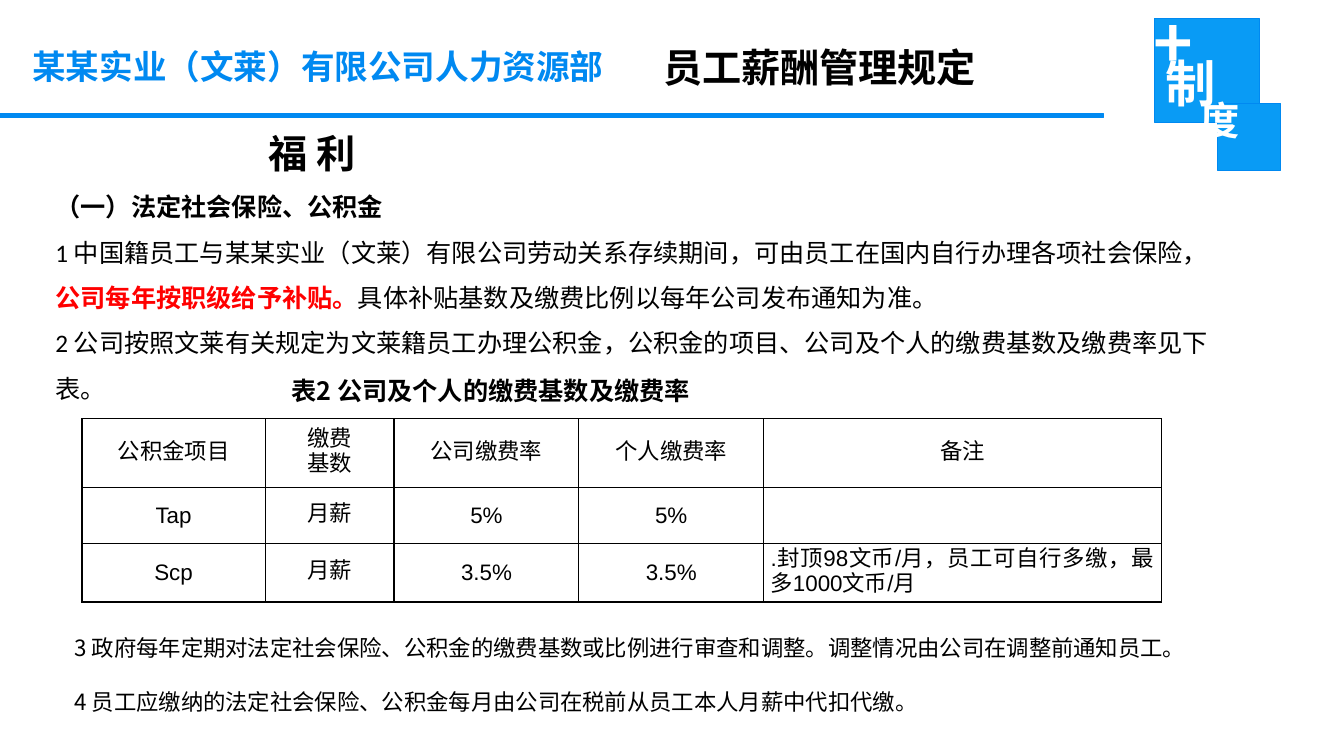
from dataclasses import dataclass

from lxml import etree
from pptx import Presentation
from pptx.dml.color import RGBColor
from pptx.enum import shapes, text
from pptx.oxml import ns
from pptx.util import Pt


@dataclass(frozen=True)
class Theme:
    blue: str = "0089F1"
    tile: str = "099BF5"
    white: str = "FFFFFF"
    black: str = "000000"
    red: str = "FF0000"
    sans: str = "Noto Sans CJK SC"
    mark: str = "Noto Sans CJK JP"
    number: str = "Calibri"
    table: str = "Arial"
    title: int = 28
    department: int = 24
    body: int = 18
    small: int = 16


THEME = Theme()
ALIGN = text.PP_ALIGN
COMPANY = "某某实业（文莱）有限公司"
COLUMN_WIDTHS = [131, 92, 132, 132, 284]
ROW_HEIGHTS = [49, 40, 42]
FUND_ROWS = [
    ["公积金项目", "缴费\n基数", "公司缴费率", "个人缴费率", "备注"],
    ["Tap", "月薪", "5%", "5%", ""],
    ["Scp", "月薪", "3.5%", "3.5%", ".封顶98文币/月，员工可自行多缴，最多1000文币/月"],
]


def add_run(paragraph, content, size=THEME.body, font=THEME.sans,
            color=THEME.black, bold=False):
    run = paragraph.add_run()
    run.text = content
    run.font.size = Pt(size)
    run.font.name = font
    run.font.bold = bold
    run.font.color.rgb = RGBColor.from_string(color)
    east_asian = THEME.mark if font == THEME.mark else THEME.sans
    etree.SubElement(run.font._element, ns.qn("a:ea"), typeface=east_asian)


def write(paragraph, content, spacing=None, align=None, indent=0, **format):
    """Write a string, or a list of (string, format changes) pairs."""
    paragraph.line_spacing = spacing
    paragraph.alignment = align
    if indent:
        paragraph._p.get_or_add_pPr().set("marL", str(Pt(indent)))
    parts = [(content, {})] if isinstance(content, str) else content
    for part, changes in parts:
        add_run(paragraph, part, **{**format, **changes})


def add_text(slide, left, top, width, height, lines, **format):
    """Add a text box; each line is a (content, format changes) pair."""
    box = slide.shapes.add_textbox(Pt(left), Pt(top), Pt(width), Pt(height))
    frame = box.text_frame
    frame.word_wrap = True
    for index, (content, changes) in enumerate(lines):
        paragraph = frame.add_paragraph() if index else frame.paragraphs[0]
        write(paragraph, content, **{**format, **changes})


def add_block(slide, left, top, width, height, fill):
    shape = slide.shapes.add_shape(shapes.MSO_SHAPE.RECTANGLE,
                                   Pt(left), Pt(top), Pt(width), Pt(height))
    shape.shadow.inherit = False
    shape.fill.solid()
    shape.fill.fore_color.rgb = RGBColor.from_string(fill)
    shape.line.color.rgb = RGBColor.from_string(THEME.blue)
    shape.line.width = Pt(0.75)


def add_borders(cell):
    properties = cell._tc.get_or_add_tcPr()
    for index, side in enumerate(("lnL", "lnR", "lnT", "lnB")):
        line = etree.Element(ns.qn(f"a:{side}"), w=str(Pt(1)))
        fill = etree.SubElement(line, ns.qn("a:solidFill"))
        etree.SubElement(fill, ns.qn("a:srgbClr"), val=THEME.black)
        properties.insert(index, line)


def fill_cell(cell, content, align):
    cell.fill.background()
    add_borders(cell)
    cell.vertical_anchor = text.MSO_ANCHOR.MIDDLE
    cell.margin_left = cell.margin_right = Pt(5)
    cell.margin_top = cell.margin_bottom = 0
    for index, line in enumerate(content.split("\n") if content else []):
        frame = cell.text_frame
        paragraph = frame.add_paragraph() if index else frame.paragraphs[0]
        write(paragraph, line, spacing=Pt(18), align=align,
              size=THEME.small, font=THEME.table)


def add_fund_table(slide, left, top):
    frame = slide.shapes.add_table(
        len(ROW_HEIGHTS), len(COLUMN_WIDTHS), Pt(left), Pt(top),
        Pt(sum(COLUMN_WIDTHS)), Pt(sum(ROW_HEIGHTS)))
    table = frame.table
    table.first_row = table.horz_banding = False
    for column, width in zip(table.columns, COLUMN_WIDTHS):
        column.width = Pt(width)
    for row, height, contents in zip(table.rows, ROW_HEIGHTS, FUND_ROWS):
        row.height = Pt(height)
        for cell, content in zip(row.cells, contents):
            is_note = content.startswith(".")
            fill_cell(cell, content, ALIGN.JUSTIFY if is_note else ALIGN.CENTER)


def main():
    presentation = Presentation()
    presentation.slide_width, presentation.slide_height = Pt(960), Pt(540)
    slide = presentation.slides.add_slide(presentation.slide_layouts[6])

    # Header rule and corner mark
    add_block(slide, 0, 81, 788, 3, THEME.blue)
    add_block(slide, 825, 13.5, 75, 74, THEME.tile)
    add_block(slide, 870, 74, 45, 47.5, THEME.tile)
    add_text(slide, 817, 33, 112, 74, [
        ("+", dict(size=48, font=THEME.mark)),
        ("制", dict(size=36, indent=8.5)),
        ("度", dict(size=28, indent=33.5)),
    ], spacing=Pt(22), color=THEME.white, bold=True)

    # Department and document title
    add_text(slide, 16, 29.5, 440, 36, [(COMPANY + "人力资源部", {})],
             size=THEME.department, color=THEME.blue, bold=True)
    add_text(slide, 466.5, 27.5, 315, 41, [("员工薪酬管理规定", {})],
             size=THEME.title, bold=True)

    # Fund table with its caption
    add_text(slide, 201, 254, 600, 40, [("表2 公司及个人的缴费基数及缴费率", {})],
             spacing=1.5, bold=True)
    add_fund_table(slide, 58.5, 299)

    # Clauses above and below the table
    add_text(slide, 32.5, 72, 855, 222, [
        ("福 利", dict(size=THEME.title, bold=True, font=THEME.sans, indent=152)),
        ("（一）法定社会保险、公积金", dict(bold=True, font=THEME.sans)),
        ([(f"1 中国籍员工与{COMPANY}劳动关系存续期间，可由员工在国内自行办理各项社会保险，", {}),
          ("公司每年按职级给予补贴。", dict(color=THEME.red, bold=True)),
          ("具体补贴基数及缴费比例以每年公司发布通知为准。", {})], {}),
        ("2 公司按照文莱有关规定为文莱籍员工办理公积金，"
         "公积金的项目、公司及个人的缴费基数及缴费率见下表。", {}),
    ], spacing=1.5, font=THEME.number)
    add_text(slide, 46, 430.5, 840, 109, [
        ("3 政府每年定期对法定社会保险、公积金的缴费基数或比例进行审查和调整。"
         "调整情况由公司在调整前通知员工。", {}),
        ("4 员工应缴纳的法定社会保险、公积金每月由公司在税前从员工本人月薪中代扣代缴。", {}),
    ], spacing=2.0, size=THEME.small)

    presentation.save("out.pptx")


if __name__ == "__main__":
    main()
